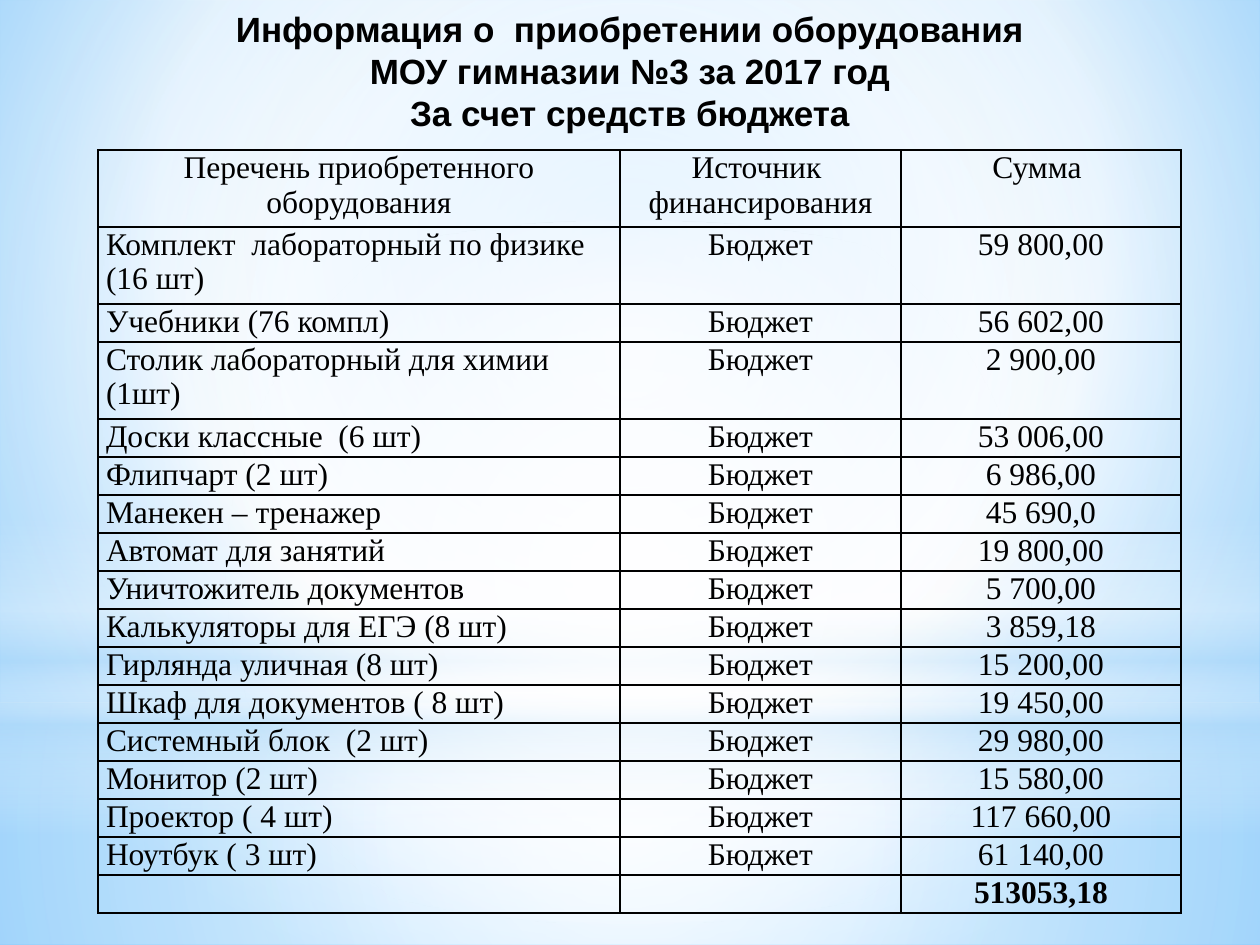
from dataclasses import dataclass
from typing import NamedTuple

from lxml import etree
from pptx import Presentation
from pptx.dml.color import RGBColor
from pptx.enum.shapes import MSO_SHAPE
from pptx.enum.text import MSO_ANCHOR, MSO_AUTO_SIZE, PP_ALIGN
from pptx.oxml import parse_xml
from pptx.oxml.ns import nsdecls, qn
from pptx.util import Emu, Pt

RECT, OVAL = MSO_SHAPE.RECTANGLE, MSO_SHAPE.OVAL
LEFT, CENTER = PP_ALIGN.LEFT, PP_ALIGN.CENTER
TOP = MSO_ANCHOR.TOP
NO_FIT = MSO_AUTO_SIZE.NONE
SCALE = 914400 / 126


@dataclass(frozen=True)
class Theme:
    ink: str = "000000"
    white: str = "FFFFFF"
    pale: str = "B4DCFA"
    sky: str = "9ED5FF"
    deep: str = "5BB9FF"
    head_font: str = "Arial"
    cell_font: str = "Times New Roman"
    head_size: int = 20
    cell_size: int = 18
    rule: int = 1


class Stop(NamedTuple):
    pos: int
    color: str
    alpha: int = 100


class Glow(NamedTuple):
    kind: int
    top: int
    height: int
    stops: list[Stop]
    radial: bool = True


class Item(NamedTuple):
    name: str
    sum: str
    lines: int = 1


T = Theme()
WIDTH, HEIGHT = 1260, 945
COLS = (522, 281, 280)
ROW, TALL = 38, 77
PAD = 8
MID = (50, 50, 50, 50)

BACK = [Stop(0, T.sky), Stop(60, T.white), Stop(100, T.deep)]
GLOWS = [
    Glow(RECT, 703, 242, [Stop(0, T.white, 91), Stop(37, T.white, 76), Stop(100, T.pale, 79)]),
    Glow(RECT, 0, 703, [Stop(0, T.white, 89), Stop(48, T.white, 62), Stop(100, T.pale, 79)]),
    Glow(RECT, 519, 315, [Stop(0, T.white, 0), Stop(29, T.white, 30), Stop(45, T.pale, 40),
                          Stop(55, T.white, 26), Stop(65, T.pale, 60),
                          Stop(100, T.white, 0)], False),
    Glow(OVAL, 221, 703, [Stop(0, T.white), Stop(56, T.white, 0)]),
]

TITLE = """Информация о  приобретении оборудования
МОУ гимназии №3 за 2017 год
За счет средств бюджета"""
HEADS = ("Перечень приобретенного\nоборудования", "Источник \nфинансирования", "Сумма ")
SOURCE = "Бюджет"
ITEMS = [
    Item("Комплект  лабораторный по физике (16 шт)", "59 800,00", 2),
    Item("Учебники (76 компл)", "56 602,00"),
    Item("Столик лабораторный для химии  (1шт)", "2 900,00", 2),
    Item("Доски классные  (6 шт)", "53 006,00"),
    Item("Флипчарт (2 шт)", "6 986,00"),
    Item("Манекен – тренажер", "45 690,0"),
    Item("Автомат для занятий", "19 800,00"),
    Item("Уничтожитель документов", "5 700,00"),
    Item("Калькуляторы для ЕГЭ (8 шт)", "3 859,18"),
    Item("Гирлянда уличная (8 шт)", "15 200,00"),
    Item("Шкаф для документов ( 8 шт)", "19 450,00"),
    Item("Системный блок  (2 шт)", "29 980,00"),
    Item("Монитор (2 шт)", "15 580,00"),
    Item("Проектор ( 4 шт)", "117 660,00"),
    Item("Ноутбук ( 3 шт)", "61 140,00"),
]
TOTAL = "513053,18"


def px(n: int) -> Emu:
    return Emu(round(n * SCALE))


def blend(fill, owner, stops: list[Stop], focus: tuple | None = MID) -> None:
    """Fill owner with a gradient, radial around focus or else running down."""
    fill.gradient()
    old = owner.xpath(".//a:gradFill")[0]
    marks = "".join(
        f'<a:gs pos="{s.pos * 1000}"><a:srgbClr val="{s.color}">'
        f'<a:alpha val="{s.alpha * 1000}"/></a:srgbClr></a:gs>' for s in stops)
    if focus:
        box = " ".join(f'{k}="{v * 1000}"' for k, v in zip("ltrb", focus))
        way = f'<a:path path="circle"><a:fillToRect {box}/></a:path>'
    else:
        way = '<a:lin ang="5400000" scaled="0"/>'
    old.getparent().replace(old, parse_xml(
        f'<a:gradFill {nsdecls("a")} rotWithShape="1"><a:gsLst>{marks}</a:gsLst>{way}</a:gradFill>'))


def add_glow(slide, glow: Glow) -> None:
    shape = slide.shapes.add_shape(glow.kind, 0, px(glow.top), px(WIDTH), px(glow.height))
    shape.shadow.inherit = False
    shape.line.fill.background()
    blend(shape.fill, shape._element.spPr, glow.stops, MID if glow.radial else None)


def style(frame, font: str, size: int, align: int, bold: bool) -> None:
    for para in frame.paragraphs:
        para.alignment = align
        para.font.name, para.font.size, para.font.bold = font, Pt(size), bold
        para.font.color.rgb = RGBColor.from_string(T.ink)


def add_title(slide) -> None:
    title = slide.shapes.title
    title.left, title.top, title.width, title.height = 0, 0, px(WIDTH), px(178)
    frame = title.text_frame
    frame.text = TITLE
    frame.auto_size, frame.vertical_anchor = NO_FIT, TOP
    frame.margin_top = px(7)
    style(frame, T.head_font, T.head_size, CENTER, True)
    for para in frame.paragraphs:
        para.line_spacing = Pt(24)
        para.space_before = Pt(0)
    slide.shapes._spTree.append(title._element)


def rule_cell(cell) -> None:
    props = cell._tc.get_or_add_tcPr()
    for n, side in enumerate(("lnL", "lnR", "lnT", "lnB")):
        line = etree.Element(qn(f"a:{side}"), w=str(Pt(T.rule)))
        fill = etree.SubElement(line, qn("a:solidFill"))
        etree.SubElement(fill, qn("a:srgbClr"), val=T.ink)
        props.insert(n, line)


def add_grid(slide) -> None:
    rows = [HEADS, *((i.name, SOURCE, i.sum) for i in ITEMS), ("", "", TOTAL)]
    highs = [TALL, *(TALL if i.lines > 1 else ROW for i in ITEMS), ROW]
    grid = slide.shapes.add_table(len(rows), len(COLS), px(98), px(150),
                                  px(sum(COLS)), px(sum(highs))).table
    grid.first_row = grid.horz_banding = False
    for col, wide in zip(grid.columns, COLS):
        col.width = px(wide)
    for r, (row, high) in enumerate(zip(rows, highs)):
        grid.rows[r].height = px(high)
        for c, text in enumerate(row):
            cell = grid.cell(r, c)
            cell.text = text
            cell.margin_left = cell.margin_right = px(PAD)
            cell.margin_top = cell.margin_bottom = 0
            cell.fill.background()
            rule_cell(cell)
            style(cell.text_frame, T.cell_font, T.cell_size,
                  CENTER if r == 0 or c else LEFT, text == TOTAL)


def main() -> None:
    deck = Presentation()
    deck.slide_width, deck.slide_height = px(WIDTH), px(HEIGHT)
    slide = deck.slides.add_slide(deck.slide_layouts[5])
    blend(slide.background.fill, slide._element, BACK, (20, 10, 20, 60))
    for glow in GLOWS:
        add_glow(slide, glow)
    add_grid(slide)
    add_title(slide)
    deck.save("out.pptx")


if __name__ == "__main__":
    main()
